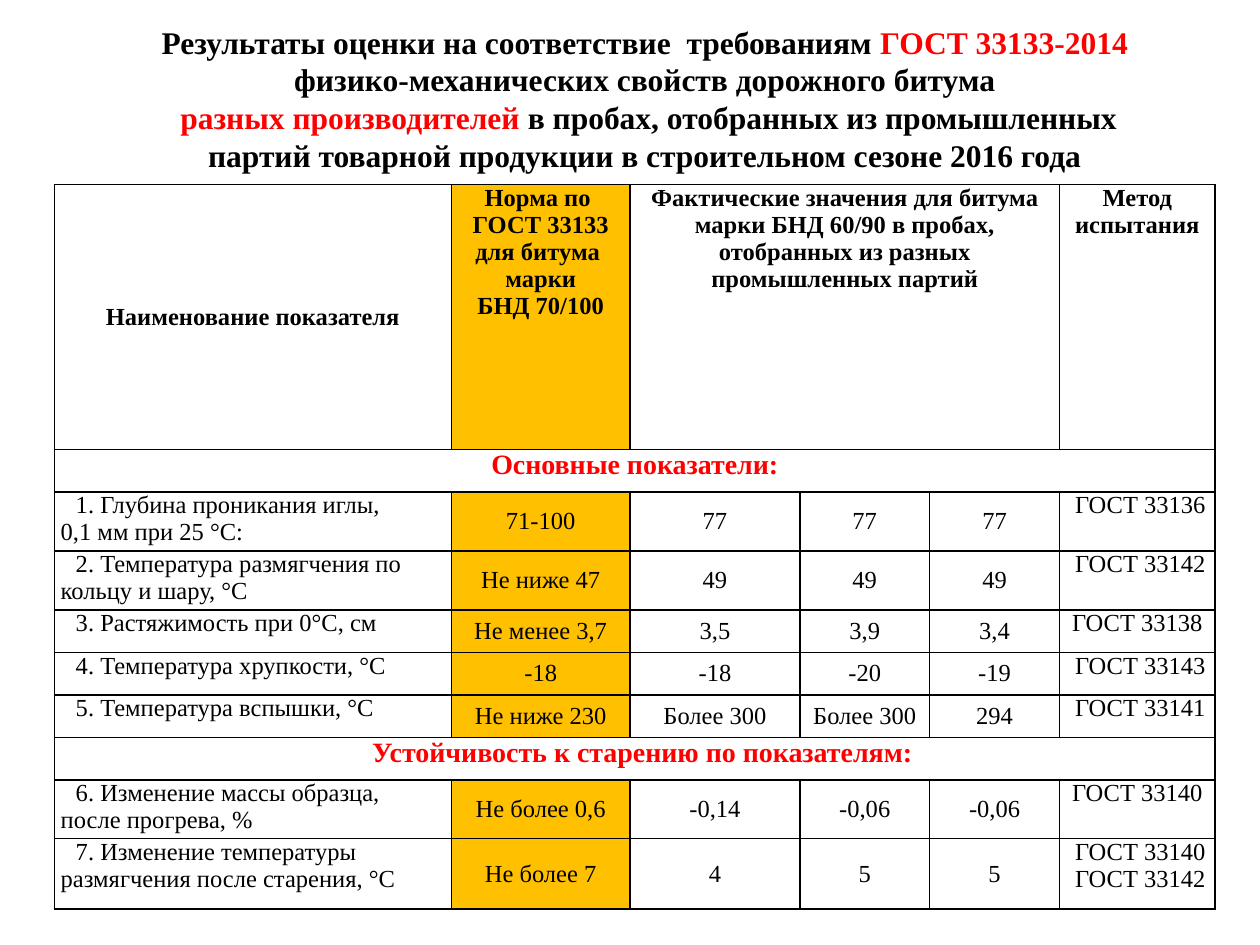
from lxml import etree
from pptx import Presentation
from pptx.dml.color import RGBColor
from pptx.enum.text import MSO_ANCHOR, MSO_AUTO_SIZE, PP_ALIGN
from pptx.oxml.ns import qn
from pptx.util import Pt

BLACK = RGBColor(0x00, 0x00, 0x00)
RED = RGBColor(0xFF, 0x00, 0x00)
AMBER = RGBColor(0xFF, 0xC0, 0x00)
FONT = "Times New Roman"
HARD_SPACE = chr(160)
LEFT, CENTER, JUSTIFY = PP_ALIGN.LEFT, PP_ALIGN.CENTER, PP_ALIGN.JUSTIFY
TOP, MIDDLE = MSO_ANCHOR.TOP, MSO_ANCHOR.MIDDLE
FIT_SHAPE = MSO_AUTO_SIZE.SHAPE_TO_FIT_TEXT


def write(frame, lines, size, bold, align=CENTER, indent=0):
    for index, line in enumerate(lines):
        para = frame.paragraphs[0] if index == 0 else frame.add_paragraph()
        para.alignment = align
        if indent:
            properties = para._p.get_or_add_pPr()
            properties.set("marL", "0")
            properties.set("indent", str(Pt(indent)))
        for text, color in line:
            span = para.add_run()
            span.text = text
            span.font.name = FONT
            span.font.size = Pt(size)
            span.font.bold = bold
            span.font.color.rgb = color


def set_border(cell, side, visible):
    line = etree.SubElement(cell._tc.get_or_add_tcPr(), qn("a:ln" + side), w=str(Pt(1)))
    if visible:
        fill = etree.SubElement(line, qn("a:solidFill"))
        etree.SubElement(fill, qn("a:srgbClr"), val=str(BLACK))
    else:
        etree.SubElement(line, qn("a:noFill"))


deck = Presentation()
deck.slide_width, deck.slide_height = Pt(720), Pt(540)
page = deck.slides.add_slide(deck.slide_layouts[6])

title = page.shapes.add_textbox(Pt(76.5), Pt(9.4), Pt(584), Pt(94.3)).text_frame
title.word_wrap = True
title.auto_size = FIT_SHAPE
write(title, [
    [("Результаты оценки на соответствие  требованиям ", BLACK), ("ГОСТ 33133-2014", RED)],
    [("физико-механических свойств дорожного битума", BLACK)],
    [(" ", BLACK), ("разных производителей ", RED),
     ("в пробах, отобранных из промышленных партий товарной продукции "
      "в строительном сезоне 2016 года", BLACK)],
], 18, True)

HEADERS = {
    0: ["Наименование показателя"],
    1: ["Норма по ", "ГОСТ 33133", "для битума ", "марки", "БНД 70/100"],
    2: ["Фактические значения для битума марки БНД 60/90 в пробах, "
        "отобранных из разных промышленных партий"],
    5: ["Метод испытания"],
}
SECTIONS = {2: ("Основные показатели:", 0),
            8: ("Устойчивость к старению по показателям:", 8.6)}
RESULTS = {
    3: (f"1. Глубина проникания иглы, 0,1{HARD_SPACE}мм при 25{HARD_SPACE}°С:", "71-100",
        "77", "77", "77", " ГОСТ 33136"),
    4: ("2. Температура размягчения по кольцу и шару, °С", "Не ниже 47",
        "49", "49", "49", " ГОСТ 33142"),
    5: ("3. Растяжимость при 0°С, см", "Не менее 3,7", "3,5", "3,9", "3,4", "ГОСТ 33138"),
    6: (f"4.{HARD_SPACE}Температура хрупкости, °С", "-18", "-18", "-20", "-19", " ГОСТ 33143"),
    7: (f"5.{HARD_SPACE}Температура вспышки, °С", "Не ниже 230",
        "Более 300", "Более 300", "294", " ГОСТ 33141"),
    9: (f"6.{HARD_SPACE}Изменение массы образца, после прогрева, %", "Не более 0,6",
        "-0,14", "-0,06", "-0,06", "ГОСТ 33140"),
    10: ("7. Изменение температуры размягчения после старения, °С", "Не более 7",
         "4", "5", "5", " ГОСТ 33140\n ГОСТ 33142"),
}
WIDTHS = [226.8, 102.2, 97, 74.2, 74.2, 89]
HEIGHTS = [48.2, 42.5] + [24.3] * 8 + [40.3]

table = page.shapes.add_table(len(HEIGHTS), len(WIDTHS), Pt(31.1), Pt(105.5),
                              Pt(sum(WIDTHS)), Pt(sum(HEIGHTS))).table
table.first_row = False
table.horz_banding = False
for column, width in zip(table.columns, WIDTHS):
    column.width = Pt(width)
for row, height in zip(table.rows, HEIGHTS):
    row.height = Pt(height)

for r in range(len(HEIGHTS)):
    for c in range(len(WIDTHS)):
        cell = table.cell(r, c)
        cell.margin_left = cell.margin_right = Pt(3.6)
        cell.margin_top = cell.margin_bottom = 0
        for side in "LRTB":
            inside_header = 2 <= c <= 4 and (r, side) in ((0, "B"), (1, "T"))
            set_border(cell, side, not inside_header)
        if c == 1 and r not in SECTIONS:
            cell.fill.solid()
            cell.fill.fore_color.rgb = AMBER
        else:
            cell.fill.background()

for c, lines in HEADERS.items():
    cell = table.cell(0, c)
    cell.vertical_anchor = MIDDLE if c == 0 else TOP
    write(cell.text_frame, [[(text, BLACK)] for text in lines], 14, True)
for c in (0, 1, 5):
    table.cell(0, c).merge(table.cell(1, c))
for r in (0, 1):
    table.cell(r, 2).merge(table.cell(r, 4))

for r, (text, indent) in SECTIONS.items():
    table.cell(r, 0).merge(table.cell(r, 5))
    write(table.cell(r, 0).text_frame, [[(text, RED)]], 16, True, indent=indent)

for r, values in RESULTS.items():
    for c, value in enumerate(values):
        cell = table.cell(r, c)
        cell.vertical_anchor = MIDDLE if 1 <= c <= 4 else TOP
        align = CENTER if c else JUSTIFY if r in (5, 6, 7) else LEFT
        write(cell.text_frame, [[(text, BLACK)] for text in value.split("\n")],
              14, False, align, indent=0 if c else 8.6)

deck.save("out.pptx")
